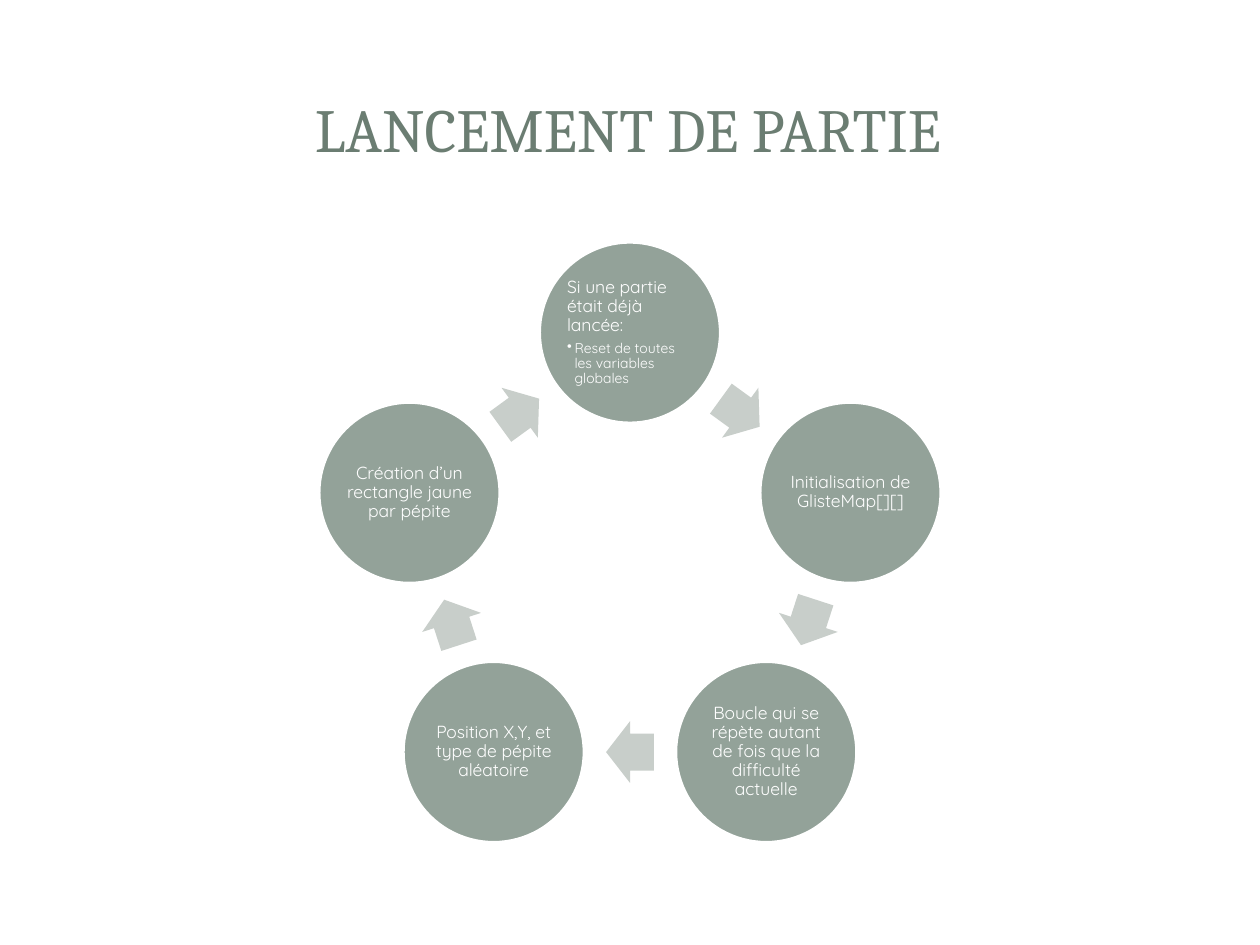
import math

from lxml import etree
from pptx import Presentation, util as u
from pptx.dml.color import RGBColor
from pptx.enum import shapes, text
from pptx.oxml.ns import qn

WHITE = RGBColor(0xFF, 0xFF, 0xFF)
SAGE = RGBColor(0x93, 0xA2, 0x99)
PALE_SAGE = RGBColor(0xC8, 0xCE, 0xCA)
DARK_SAGE = RGBColor(0x6B, 0x7D, 0x72)

WIDTH, HEIGHT = 10, 7.5
CENTER = (5, 4.48)
RADIUS = 1.84
CIRCLE = 1.44
ARROW = (0.38, 0.49)

STEPS = [
    ["Si une partie était déjà lancée:", "Reset de toutes les variables globales"],
    ["Initialisation de GlisteMap[][]"],
    ["Boucle qui se répète autant de fois que la difficulté actuelle"],
    ["Position X,Y, et type de pépite aléatoire"],
    ["Création d’un rectangle jaune par pépite"],
]


def write(para, words, font="Quicksand", size=10, color=WHITE,
          align=text.PP_ALIGN.CENTER, spacing=None, after=0, bullet=False):
    para.alignment = align
    para.line_spacing = spacing
    para.space_after = u.Pt(after)
    span = para.add_run()
    span.text = words
    span.font.name = font
    span.font.size = u.Pt(size)
    span.font.color.rgb = color
    if bullet:
        layout = para._p.get_or_add_pPr()
        layout.set("marL", str(u.Inches(0.06)))
        layout.set("indent", str(-u.Inches(0.06)))
        etree.SubElement(layout, qn("a:buChar"), char="•")


def on_ring(turn, radius):
    """Point on the cycle, clockwise from the top, turn in degrees."""
    angle = math.radians(turn)
    return CENTER[0] + radius * math.sin(angle), CENTER[1] - radius * math.cos(angle)


class CycleSlide:
    """Holds the current slide and the style of its cycle diagram."""

    def __init__(self, deck):
        self.slide = deck.slides.add_slide(deck.slide_layouts[6])

    def title(self, words):
        box = self.slide.shapes.add_textbox(
            *(u.Inches(n) for n in (0.47, 0.45, 9.03, 1.14)))
        frame = box.text_frame
        frame.word_wrap = True
        frame.vertical_anchor = text.MSO_ANCHOR.MIDDLE
        write(frame.paragraphs[0], words, font="Cambria", size=35, color=DARK_SAGE)

    def shape(self, kind, center, size, fill):
        left, top = (c - s / 2 for c, s in zip(center, size))
        shape = self.slide.shapes.add_shape(
            kind, *(u.Inches(n) for n in (left, top, *size)))
        shape.shadow.inherit = False
        shape.fill.solid()
        shape.fill.fore_color.rgb = fill
        shape.line.fill.background()
        return shape

    def step(self, turn, heading, *details):
        circle = self.shape(shapes.MSO_SHAPE.OVAL, on_ring(turn, RADIUS),
                            (CIRCLE, CIRCLE), SAGE)
        circle.line.color.rgb = WHITE
        circle.line.width = u.Pt(2)
        frame = circle.text_frame
        frame.word_wrap = True
        frame.vertical_anchor = text.MSO_ANCHOR.MIDDLE
        frame.margin_left = frame.margin_right = u.Inches(0.01)
        frame.margin_top = frame.margin_bottom = u.Inches(0.01)
        align = text.PP_ALIGN.LEFT if details else text.PP_ALIGN.CENTER
        write(frame.paragraphs[0], heading, align=align, spacing=0.9, after=3.5)
        for detail in details:
            para = frame.add_paragraph()
            para.level = 1
            write(para, detail, size=8, align=align, spacing=0.9, after=1.2, bullet=True)

    def arrow(self, turn, half_step):
        """Arrow halfway along the chord between two neighbouring circles."""
        middle = on_ring(turn, RADIUS * math.cos(math.radians(half_step)))
        arrow = self.shape(shapes.MSO_SHAPE.RIGHT_ARROW, middle, ARROW, PALE_SAGE)
        arrow.adjustments[0] = 0.6
        arrow.adjustments[1] = 0.5
        arrow.rotation = turn


def main():
    deck = Presentation()
    deck.slide_width, deck.slide_height = u.Inches(WIDTH), u.Inches(HEIGHT)
    page = CycleSlide(deck)
    page.title("LANCEMENT DE PARTIE")
    step_angle = 360 / len(STEPS)
    for index, words in enumerate(STEPS):
        turn = index * step_angle
        page.step(turn, *words)
        page.arrow(turn + step_angle / 2, step_angle / 2)
    deck.save("out.pptx")


if __name__ == "__main__":
    main()
